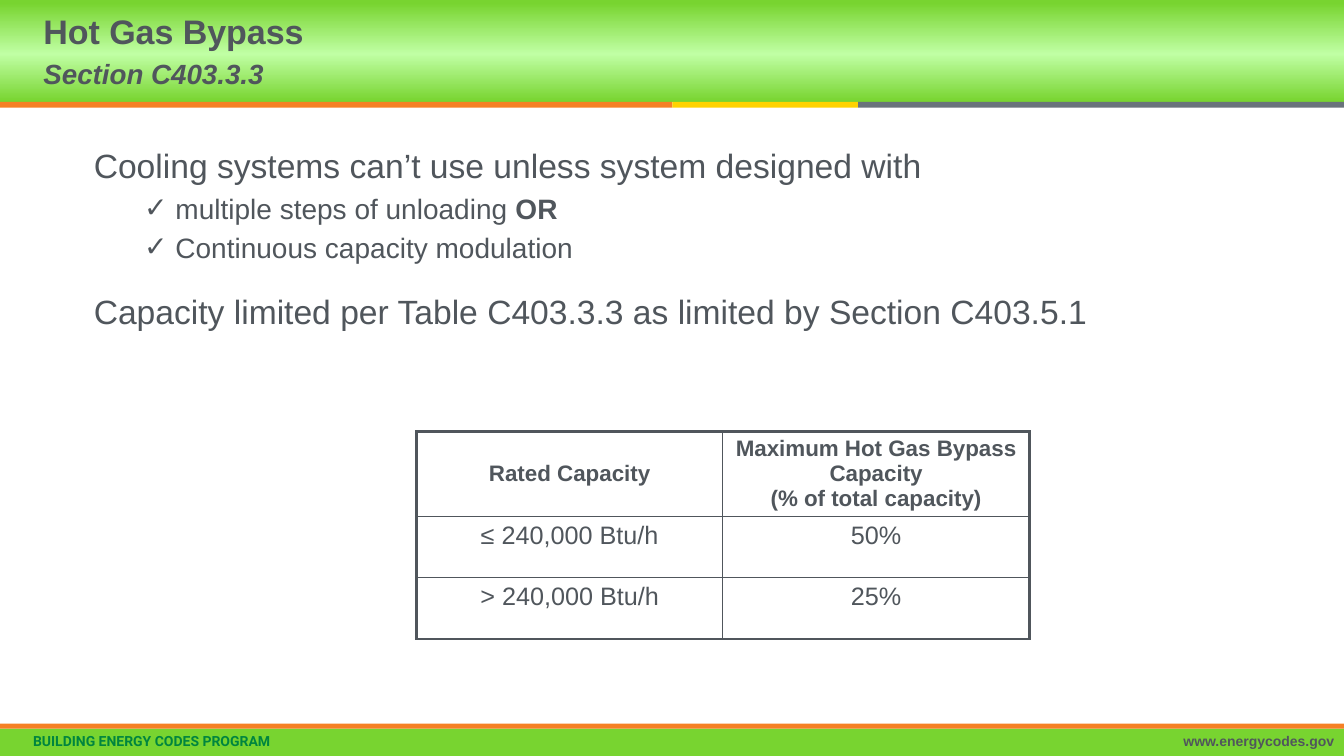
import copy

import pptx
import pptx.dml.color
import pptx.enum.shapes
import pptx.enum.text
import pptx.oxml.ns
import pptx.util
from lxml import etree

Inches = pptx.util.Inches
Pt = pptx.util.Pt
RGB = pptx.dml.color.RGBColor.from_string
ALIGN = pptx.enum.text.PP_ALIGN
ANCHOR = pptx.enum.text.MSO_ANCHOR
RECTANGLE = pptx.enum.shapes.MSO_SHAPE.RECTANGLE
qn = pptx.oxml.ns.qn

COLORS = {
    "text": "50565C",
    "green": "78D430",
    "light green": "C0FFA4",
    "dark green": "00853F",
    "orange": "F58025",
    "yellow": "FFD200",
    "gray": "6A737B",
}


def write(paragraph, text, size, font="Arial", color="text", bold=False,
          italic=False, align=ALIGN.LEFT, before=0, spacing=None):
    """Append formatted text, breaking lines at newlines, and set the spacing."""
    paragraph.alignment = align
    paragraph.space_before = Pt(before)
    if spacing:
        paragraph.line_spacing = spacing
    for index, line in enumerate(text.split("\n")):
        if index:
            paragraph.add_line_break()
        run = paragraph.add_run()
        run.text = line
        run.font.name = font
        run.font.size = Pt(size)
        run.font.bold = bold
        run.font.italic = italic
        run.font.color.rgb = RGB(COLORS[color])


def add_band(left, top, width, height, color):
    band = slide.shapes.add_shape(
        RECTANGLE, Inches(left), Inches(top), Inches(width), Inches(height))
    band.shadow.inherit = False
    band.line.fill.background()
    band.fill.solid()
    band.fill.fore_color.rgb = RGB(COLORS[color])
    return band


deck = pptx.Presentation()
deck.slide_width = Inches(13.33)
deck.slide_height = Inches(7.5)
slide = deck.slides.add_slide(deck.slide_layouts[1])
title, body = slide.placeholders

# Header and footer bands
header = add_band(0, 0, 13.33, 1.01, "green")
header.fill.gradient()
header.fill.gradient_angle = 90
stop_list = header._element.spPr.find(".//" + qn("a:gsLst"))
stop_list.insert(1, copy.deepcopy(stop_list[0]))
for stop, (color, position) in zip(
        header.fill.gradient_stops,
        [("green", 0), ("light green", 0.47), ("green", 0.97)]):
    stop.color.rgb = RGB(COLORS[color])
    stop.position = position

for left, width, color in [(0, 6.67, "orange"), (6.67, 1.84, "yellow"),
                           (8.51, 4.82, "gray")]:
    add_band(left, 1.01, width, 0.06, color)
add_band(0, 7.23, 13.33, 0.27, "green")
add_band(0, 7.18, 13.33, 0.05, "orange")

for left, width, text, font, color, align in [
        (0.23, 7, "BUILDING ENERGY CODES PROGRAM", "Roboto", "dark green", ALIGN.LEFT),
        (7.99, 5.34, "www.energycodes.gov", "Arial", "text", ALIGN.RIGHT)]:
    footer = slide.shapes.add_textbox(
        Inches(left), Inches(7.24), Inches(width), Inches(0.26))
    footer.text_frame.word_wrap = True
    write(footer.text_frame.paragraphs[0], text, 10, font=font, color=color,
          bold=True, align=align, spacing=0.9)

# Title and list, raised above the bands
for placeholder, (left, top, width, height), anchor in [
        (title, (0.33, 0, 7.33, 1.01), ANCHOR.MIDDLE),
        (body, (0.83, 1.39, 10.4, 2.4), ANCHOR.TOP)]:
    placeholder.left, placeholder.top = Inches(left), Inches(top)
    placeholder.width, placeholder.height = Inches(width), Inches(height)
    placeholder.text_frame.auto_size = pptx.enum.text.MSO_AUTO_SIZE.NONE
    placeholder.text_frame.vertical_anchor = anchor
    slide.shapes._spTree.append(placeholder._element)

heading = title.text_frame.paragraphs[0]
write(heading, "Hot Gas Bypass", 24.3, bold=True, spacing=Pt(28))
section = title.text_frame.add_paragraph()
write(section, "Section C403.3.3", 19.8, bold=True, italic=True, spacing=Pt(28))

requirements = [
    (0, 0, [("Cooling systems can’t use unless system designed with", False)]),
    (1, 4, [("multiple steps of unloading ", False), ("OR", True)]),
    (1, 4, [("Continuous capacity modulation", False)]),
    (0, 19, [("Capacity limited per Table C403.3.3 as limited by Section C403.5.1", False)]),
]
for index, (level, before, parts) in enumerate(requirements):
    frame = body.text_frame
    requirement = frame.add_paragraph() if index else frame.paragraphs[0]
    requirement.level = level
    properties = requirement._p.get_or_add_pPr()
    properties.set("marL", str(Inches(0.81 * level)))
    properties.set("indent", str(Inches(-0.31 * level)))
    if level:
        etree.SubElement(properties, qn("a:buFont")).set("typeface", "Arial")
        etree.SubElement(properties, qn("a:buChar")).set("char", "✓")
    else:
        etree.SubElement(properties, qn("a:buNone"))
    for text, bold in parts:
        write(requirement, text, 20 if level else 24, bold=bold, before=before)

# Bypass limits: thick outer borders, thin inner ones
limits = [
    ("Rated Capacity", "Maximum Hot Gas Bypass Capacity\n(% of total capacity)"),
    ("≤ 240,000 Btu/h", "50%"),
    ("> 240,000 Btu/h", "25%"),
]
table = slide.shapes.add_table(
    3, 2, Inches(4.13), Inches(4.28), Inches(6.08), Inches(2.05)).table
table.first_row = False
table.horz_banding = False
for row, height in zip(table.rows, (0.83, 0.61, 0.61)):
    row.height = Inches(height)

for r, values in enumerate(limits):
    for c, value in enumerate(values):
        cell = table.cell(r, c)
        cell.fill.background()
        cell.vertical_anchor = ANCHOR.TOP if r else ANCHOR.MIDDLE
        write(cell.text_frame.paragraphs[0], value, 18 if r else 16,
              bold=r == 0, align=ALIGN.CENTER)
        outer_sides = [("lnL", c == 0), ("lnR", c == 1), ("lnT", r == 0), ("lnB", r == 2)]
        for place, (side, outer) in enumerate(outer_sides):
            border = etree.Element(qn("a:" + side), w=str(Pt(2.25 if outer else 1)))
            fill = etree.SubElement(border, qn("a:solidFill"))
            etree.SubElement(fill, qn("a:srgbClr")).set("val", COLORS["text"])
            cell._tc.get_or_add_tcPr().insert(place, border)

deck.save("out.pptx")
